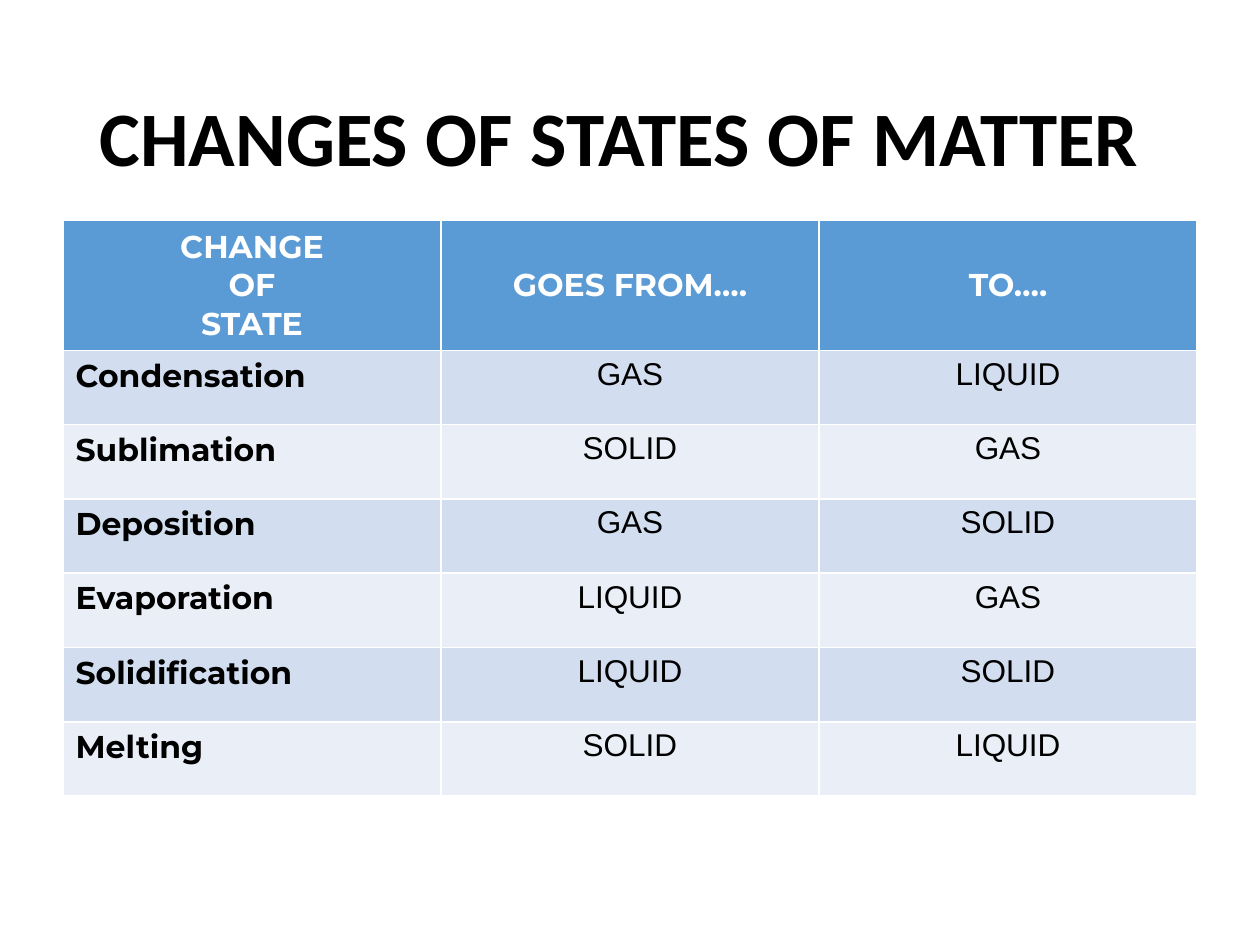
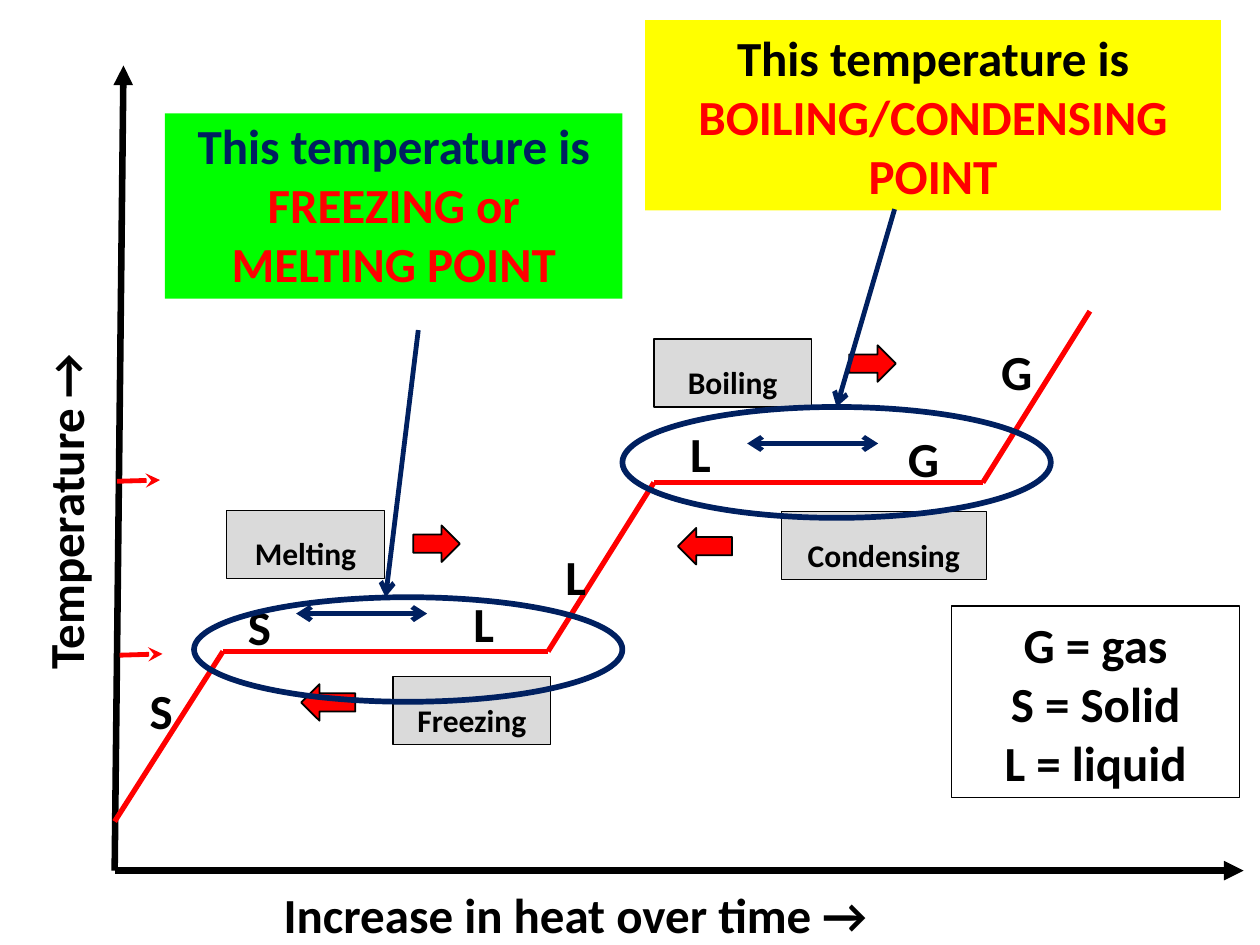
from dataclasses import dataclass
from itertools import pairwise
from typing import Any, NamedTuple, Optional

import pptx
import pptx.dml.color
import pptx.enum.shapes
import pptx.enum.text
import pptx.oxml
import pptx.oxml.ns
import pptx.util
from pptx.util import Inches

RGBColor = pptx.dml.color.RGBColor
Preset = pptx.enum.shapes.MSO_SHAPE
Anchor = pptx.enum.text.MSO_ANCHOR
Align = pptx.enum.text.PP_ALIGN
Pt = pptx.util.Pt

# Colours
BLACK = RGBColor(0x00, 0x00, 0x00)
WHITE = RGBColor(0xFF, 0xFF, 0xFF)
RED = RGBColor(0xFF, 0x00, 0x00)
NAVY = RGBColor(0x00, 0x20, 0x60)
YELLOW = RGBColor(0xFF, 0xFF, 0x00)
GREEN = RGBColor(0x00, 0xFF, 0x00)
GREY = RGBColor(0x80, 0x80, 0x80)
HEADER_BLUE = RGBColor(0x5B, 0x9B, 0xD5)
BANDS = (RGBColor(0xD2, 0xDE, 0xEF), RGBColor(0xEA, 0xEF, 0xF7))

# Text formats
TITLE = {"name": "Calibri", "size": Pt(44), "bold": True}
LARGE = {"name": "Calibri", "size": Pt(28), "bold": True}
SMALL = {"name": "Calibri", "size": Pt(18), "bold": True}
CHANGE_NAME = {"name": "Montserrat", "size": Pt(18), "bold": True}
STATE_NAME = {"name": "Arial", "size": Pt(18), "bold": False}
LABEL_SPACING = Pt(58)


class Area(NamedTuple):
    left: float
    top: float
    width: float
    height: float


class Span(NamedTuple):
    text: str
    color: RGBColor = BLACK


class Point(NamedTuple):
    x: float
    y: float


@dataclass
class Line:
    start: Point
    end: Point
    color: RGBColor
    width: float
    head: Optional[str] = None
    tail: Optional[str] = None


@dataclass
class Block:
    area: Area
    preset: Any = Preset.RECTANGLE
    fill: Optional[RGBColor] = None
    alpha: Optional[int] = None
    outline: Optional[RGBColor] = None
    outline_width: float = 0.75
    rotation: int = 0


def set_paragraph(para: Any, spans: list[Span], style: dict[str, Any],
                  align: Any = Align.CENTER, spacing: Any = None) -> None:
    para.alignment = align
    para.line_spacing = spacing
    for part in spans:
        span = para.add_run()
        span.text = part.text
        for name, value in style.items():
            setattr(span.font, name, value)
        span.font.color.rgb = part.color


def set_text(frame: Any, paragraphs: list[list[Span]], style: dict[str, Any],
             align: Any = Align.CENTER, spacing: Any = None) -> None:
    for index, spans in enumerate(paragraphs):
        para = frame.paragraphs[0] if index == 0 else frame.add_paragraph()
        set_paragraph(para, spans, style, align, spacing)


def set_frame(frame: Any, anchor: Any = Anchor.BOTTOM) -> None:
    settings = {"word_wrap": True, "vertical_anchor": anchor,
                "auto_size": pptx.enum.text.MSO_AUTO_SIZE.NONE}
    for name, value in settings.items():
        setattr(frame, name, value)


def draw_line(page: Any, line: Line) -> Any:
    connector = page.shapes.add_connector(
        pptx.enum.shapes.MSO_CONNECTOR.STRAIGHT,
        *(Inches(value) for value in (*line.start, *line.end)))
    connector.line.color.rgb = line.color
    connector.line.width = Pt(line.width)
    outline = connector.line._get_or_add_ln()
    for tag, kind in (("a:headEnd", line.head), ("a:tailEnd", line.tail)):
        if kind:
            end = pptx.oxml.parse_xml(f'<{tag} {pptx.oxml.ns.nsdecls("a")} type="{kind}"/>')
            outline.append(end)
    connector._element.spPr.append(
        pptx.oxml.parse_xml(f'<a:effectLst {pptx.oxml.ns.nsdecls("a")}/>'))
    return connector


def draw_block(page: Any, block: Block) -> Any:
    shape = page.shapes.add_shape(block.preset, *map(Inches, block.area))
    shape.shadow.inherit = False
    shape.rotation = block.rotation
    if block.fill is None:
        shape.fill.background()
    else:
        shape.fill.solid()
        shape.fill.fore_color.rgb = block.fill
    if block.alpha is not None:
        color = shape._element.spPr.find(".//" + pptx.oxml.ns.qn("a:srgbClr"))
        color.append(pptx.oxml.parse_xml(
            f'<a:alpha {pptx.oxml.ns.nsdecls("a")} val="{block.alpha * 1000}"/>'))
    if block.outline is None:
        shape.line.fill.background()
    else:
        shape.line.color.rgb = block.outline
        shape.line.width = Pt(block.outline_width)
    set_frame(shape.text_frame)
    return shape


def draw_label(page: Any, text: str, area: Area, rotation: int = 0) -> None:
    box = page.shapes.add_textbox(*map(Inches, area))
    box.rotation = rotation
    set_frame(box.text_frame)
    set_text(box.text_frame, [[Span(text)]], LARGE, spacing=LABEL_SPACING)


def build_table_page(deck: Any) -> None:
    page = deck.slides.add_slide(deck.slide_layouts[5])

    # Title
    title = page.shapes.title
    title.left, title.top, title.width, title.height = map(Inches, (0.69, 0.4, 8.62, 1.45))
    set_frame(title.text_frame, Anchor.MIDDLE)
    set_text(title.text_frame, [[Span("CHANGES OF STATES OF MATTER")]], TITLE,
             Align.LEFT, 0.9)

    # Table of changes
    headings = (("CHANGE", "OF", "STATE"), ("GOES FROM….",), ("TO….",))
    changes = (
        ("Condensation", "GAS", "LIQUID"),
        ("Sublimation", "SOLID", "GAS"),
        ("Deposition", "GAS", "SOLID"),
        ("Evaporation", "LIQUID", "GAS"),
        ("Solidification", "LIQUID", "SOLID"),
        ("Melting", "SOLID", "LIQUID"),
    )
    table = page.shapes.add_table(len(changes) + 1, len(headings), Inches(0.5), Inches(1.75),
                                  Inches(9), Inches(4.59)).table
    for index, row in enumerate(table.rows):
        row.height = Inches(0.59 if index else 1.03)
    for column, lines in enumerate(headings):
        cell = table.cell(0, column)
        cell.fill.solid()
        cell.fill.fore_color.rgb = HEADER_BLUE
        cell.vertical_anchor = Anchor.MIDDLE
        set_text(cell.text_frame, [[Span(line, WHITE)] for line in lines], CHANGE_NAME)
    for index, change in enumerate(changes):
        for column, text in enumerate(change):
            cell = table.cell(index + 1, column)
            cell.fill.solid()
            cell.fill.fore_color.rgb = BANDS[index % 2]
            style, align = ((STATE_NAME, Align.CENTER) if column
                            else (CHANGE_NAME, Align.LEFT))
            set_text(cell.text_frame, [[Span(text)]], style, align)


def build_curve_page(deck: Any) -> None:
    page = deck.slides.add_slide(deck.slide_layouts[6])

    # Axes
    origin = Point(0.91, 6.91)
    for tip in (Point(0.98, 0.52), Point(9.87, 6.91)):
        draw_line(page, Line(tip, origin, BLACK, 3.75, head="triangle"))

    # Heating curve
    curve = [Point(0.91, 6.52), Point(1.77, 5.17), Point(4.35, 5.17),
             Point(5.19, 3.83), Point(7.8, 3.83), Point(8.65, 2.47)]
    for start, end in pairwise(curve):
        draw_line(page, Line(start, end, RED, 3))

    # State letters
    letters = (("L", 5.19, 3.19), ("S", 1.69, 4.56), ("S", 0.91, 5.23), ("L", 3.47, 4.54),
               ("L", 4.2, 4.16), ("G", 7.7, 2.54), ("G", 6.96, 3.23))
    for letter, left, top in letters:
        draw_label(page, letter, Area(left, top, 0.74, 0.69))

    # Key to the letters
    key = draw_block(page, Block(Area(7.55, 4.81, 2.29, 1.52), outline=BLACK))
    set_text(key.text_frame, [[Span(text)] for text in ("G = gas", "S = Solid", "L = liquid")],
             LARGE)

    # Names of the changes
    names = (("Freezing", 3.12, 5.37, 1.25), ("Boiling", 5.19, 2.69, 1.25),
             ("Melting", 1.8, 4.05, 1.25), ("Condensing", 6.2, 4.06, 1.63))
    for name, left, top, width in names:
        tag = draw_block(page, Block(Area(left, top, width, 0.54), fill=GREY, alpha=29,
                                     outline=BLACK))
        set_text(tag.text_frame, [[Span(name)]], SMALL, spacing=LABEL_SPACING)

    # Direction arrows
    directions = ((5.38, 4.19, 0.43, 180), (6.74, 2.74, 0.37, 0),
                  (2.39, 5.43, 0.43, 180), (3.28, 4.17, 0.37, 0))
    for left, top, width, rotation in directions:
        draw_block(page, Block(Area(left, top, width, 0.29), Preset.RIGHT_ARROW, RED,
                               outline=BLACK, outline_width=1, rotation=rotation))
    for left, y in ((5.93, 3.52), (2.35, 4.87)):
        draw_line(page, Line(Point(left, y), Point(left + 1.04, y), NAVY, 2.75,
                             head="arrow", tail="arrow"))

    # Axis names
    draw_label(page, "Temperature →", Area(-1.71, 3.76, 4.41, 0.6), rotation=270)
    draw_label(page, "Increase in heat over time →", Area(1.93, 6.94, 5.27, 0.6))

    # Callouts
    callouts = (
        (Area(5.12, 0.16, 4.57, 1.51), YELLOW, BLACK, "BOILING/CONDENSING POINT"),
        (Area(1.31, 0.9, 3.63, 1.47), GREEN, NAVY, "FREEZING or MELTING POINT"),
    )
    for area, fill, color, point_name in callouts:
        callout = draw_block(page, Block(area, fill=fill))
        set_text(callout.text_frame,
                 [[Span("This temperature is ", color), Span(point_name, RED)]], LARGE)

    # Plateau rings and their pointers
    melting_area, boiling_area = Area(1.54, 4.74, 3.4, 0.83), Area(4.94, 3.23, 3.4, 0.88)
    melting_ring, boiling_ring = (
        draw_block(page, Block(area, Preset.OVAL, outline=NAVY, outline_width=3.25))
        for area in (melting_area, boiling_area))
    draw_line(page, Line(Point(3.32, 2.62), Point(3.06, 4.74), NAVY, 2.75, tail="arrow"))
    boiling_pointer = draw_line(
        page, Line(Point(7.1, 1.66), Point(6.64, 3.23), NAVY, 2.75, tail="arrow"))
    boiling_pointer.end_connect(boiling_ring, 0)

    # Temperature marks
    for right, y in ((1.29, 5.19), (1.27, 3.81)):
        draw_line(page, Line(Point(right, y), Point(right - 0.34, y + 0.01), RED, 2.75,
                             head="stealth"))


def main() -> None:
    deck = pptx.Presentation()
    deck.slide_width, deck.slide_height = Inches(10), Inches(7.5)
    build_table_page(deck)
    build_curve_page(deck)
    deck.save("out.pptx")


if __name__ == "__main__":
    main()
